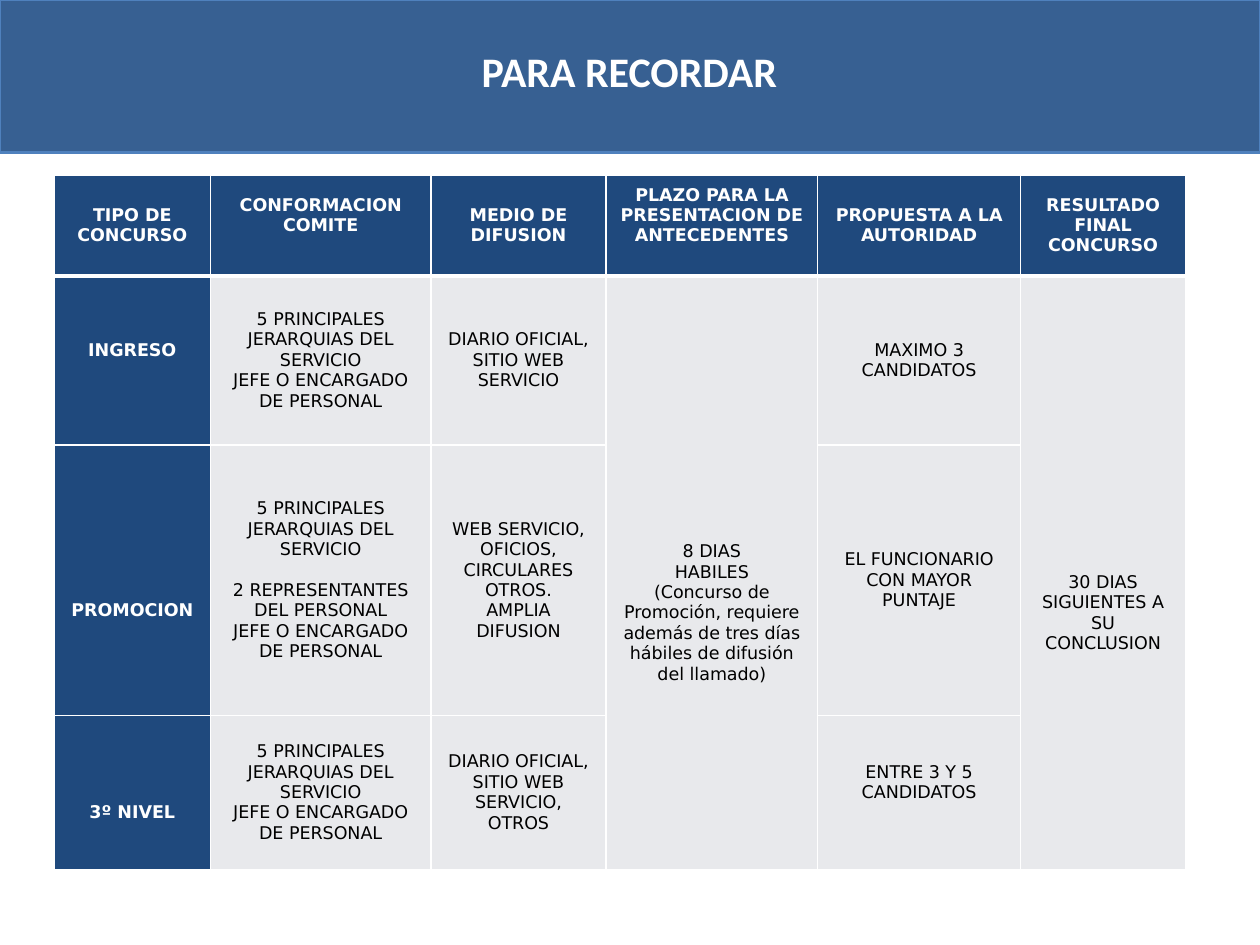
from lxml import etree
from pptx import Presentation
from pptx.dml.color import RGBColor
from pptx.enum.shapes import MSO_SHAPE
from pptx.enum.text import MSO_ANCHOR, PP_ALIGN
from pptx.oxml.ns import qn
from pptx.util import Inches, Pt

RECT = MSO_SHAPE.RECTANGLE
MIDDLE = MSO_ANCHOR.MIDDLE
CENTER = PP_ALIGN.CENTER
NAVY, GRAY, WHITE, BLACK = "1F497D", "E8E9EC", "FFFFFF", "000000"


def color(code):
    return RGBColor.from_string(code)


def add_edge(cell, side, width):
    props = cell._tc.get_or_add_tcPr()
    line = etree.SubElement(props, qn("a:ln" + side), w=str(Pt(width)))
    fill = etree.SubElement(line, qn("a:solidFill"))
    etree.SubElement(fill, qn("a:srgbClr"), val=WHITE)


deck = Presentation()
deck.slide_width, deck.slide_height = Inches(10), Inches(7.5)
slide = deck.slides.add_slide(deck.slide_layouts[6])

# Title band
band = slide.shapes.add_shape(RECT, 0, 0, Inches(10), Inches(1.21))
band.shadow.inherit = False
band.fill.solid()
band.fill.fore_color.rgb = color("376092")
band.line.color.rgb = color("4F81BD")
band.line.width = Pt(1.5)

title = slide.shapes.add_textbox(Inches(0.44), Inches(0.31), Inches(9.11), Inches(0.82))
title.text_frame.word_wrap = True
title.text_frame.text = "PARA RECORDAR"
para = title.text_frame.paragraphs[0]
para.alignment = CENTER
para.font.name = "Calibri"
para.font.size = Pt(24)
para.font.bold = True
para.font.color.rgb = color(WHITE)

# Table contents; None lies under a merged cell
panel = "5 PRINCIPALES JERARQUIAS DEL SERVICIO"
chief = "JEFE O ENCARGADO DE PERSONAL"
rows = [
    ["TIPO DE CONCURSO", "CONFORMACION COMITE", "MEDIO DE DIFUSION",
     "PLAZO PARA LA PRESENTACION DE ANTECEDENTES",
     "PROPUESTA A LA AUTORIDAD", "RESULTADO FINAL CONCURSO"],
    ["INGRESO", f"{panel}\n{chief}", "DIARIO OFICIAL,\nSITIO WEB SERVICIO",
     "8 DIAS\nHABILES\n(Concurso de Promoción, requiere además de tres días "
     "hábiles de difusión del llamado)",
     "MAXIMO 3 CANDIDATOS", "30 DIAS SIGUIENTES A SU CONCLUSION"],
    ["PROMOCION", f"{panel}\n2 REPRESENTANTES DEL PERSONAL\n{chief}",
     "WEB SERVICIO, OFICIOS, CIRCULARES OTROS.\nAMPLIA DIFUSION",
     None, "EL FUNCIONARIO CON MAYOR PUNTAJE", None],
    ["3º NIVEL", f"{panel}\n{chief}", "DIARIO OFICIAL,\nSITIO WEB SERVICIO, OTROS",
     None, "ENTRE 3 Y 5 CANDIDATOS", None],
]
widths = [1.24, 1.75, 1.39, 1.68, 1.61, 1.31]
heights = [0.8, 1.34, 2.15, 1.22]

# Lines of text by which a cell sits lower (+) or higher (-) than the middle
shifts = {(0, 1): -1, (0, 3): -1, (1, 0): -1, (1, 3): 4, (1, 5): 4,
          (2, 0): 3, (3, 0): 2, (3, 4): -1}
step = 0.16

# Table grid
frame = slide.shapes.add_table(4, 6, Inches(0.43), Inches(1.39), Inches(8.98), Inches(5.51))
table = frame.table
table.first_row = table.horz_banding = False
for col, width in zip(table.columns, widths):
    col.width = Inches(width)
for row, height in zip(table.rows, heights):
    row.height = Inches(height)
for c in (3, 5):
    table.cell(1, c).merge(table.cell(3, c))

# Table cells
for r, row in enumerate(rows):
    for c, text in enumerate(row):
        if text is None:
            continue
        cell = table.cell(r, c)
        head = r == 0 or c == 0
        for side in "LRTB":
            thick = (r, side) in ((0, "B"), (1, "T"))
            add_edge(cell, side, 3 if thick else 1)
        cell.fill.solid()
        cell.fill.fore_color.rgb = color(NAVY if head else GRAY)
        cell.vertical_anchor = MIDDLE
        shift = shifts.get((r, c), 0)
        cell.margin_left = cell.margin_right = Inches(0.09)
        cell.margin_top = Inches(0.05 + step * max(shift, 0))
        cell.margin_bottom = Inches(0.05 + step * max(-shift, 0))
        cell.text_frame.text = text
        for para in cell.text_frame.paragraphs:
            para.alignment = CENTER
            para.font.name = "DejaVu Sans"
            para.font.size = Pt(10)
            para.font.bold = head
            para.font.color.rgb = color(WHITE if head else BLACK)

# Gap between the two groups of the promotion committee
table.cell(2, 1).text_frame.paragraphs[1].space_before = Pt(11.7)

deck.save("out.pptx")
